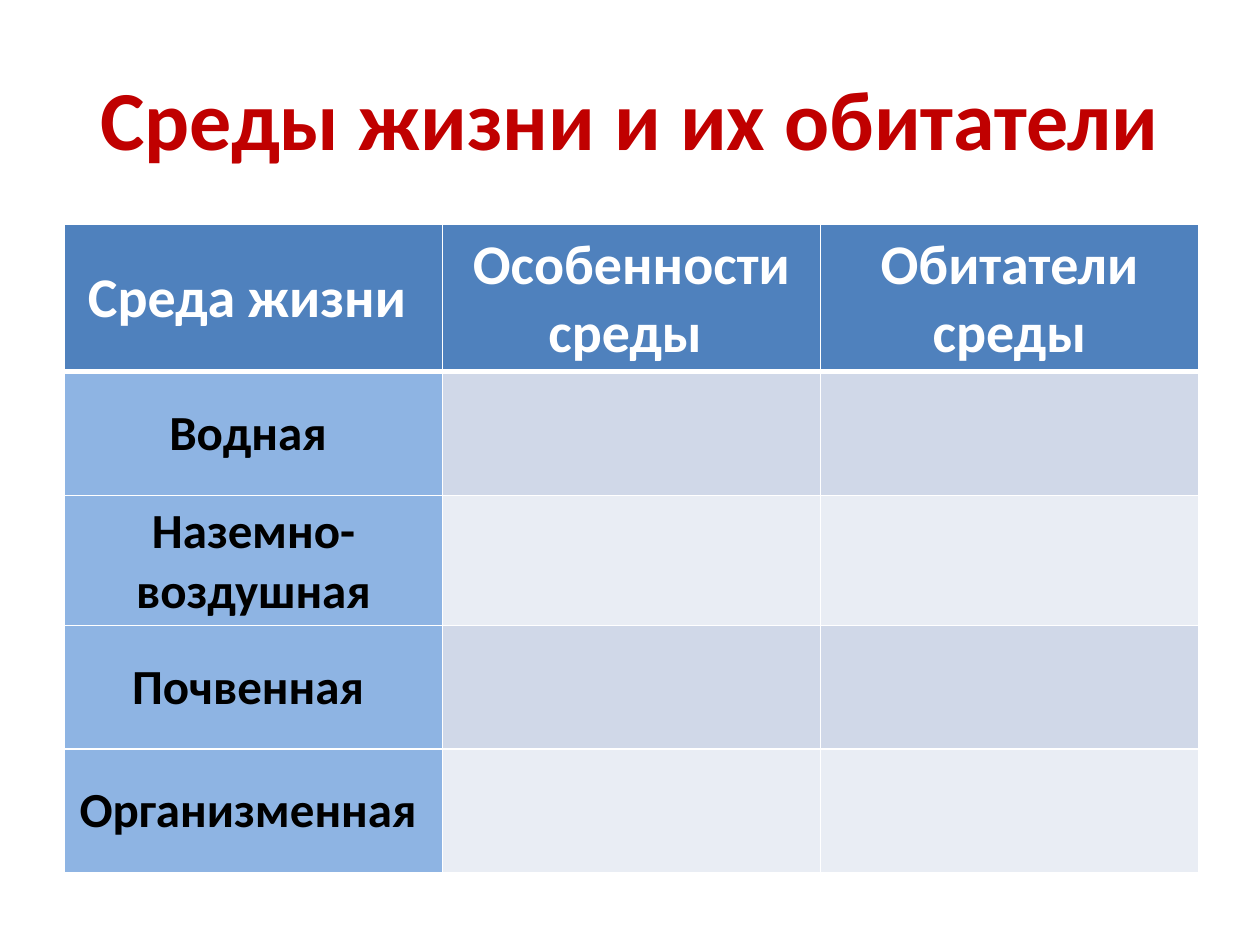
import pptx
import pptx.util
import pptx.dml.color
import pptx.enum.text
import pptx.oxml

Cm = pptx.util.Cm
Pt = pptx.util.Pt
RGBColor = pptx.dml.color.RGBColor

RED = RGBColor(0xC0, 0x00, 0x00)
WHITE = RGBColor(0xFF, 0xFF, 0xFF)
BLACK = RGBColor(0x00, 0x00, 0x00)
BLUE = RGBColor(0x4F, 0x81, 0xBD)
SKY = RGBColor(0x8E, 0xB4, 0xE3)
BANDS = RGBColor(0xD0, 0xD8, 0xE8), RGBColor(0xE9, 0xED, 0xF4)

FONT = "Calibri"
HEADS = "Среда жизни ", "Особенности среды ", "Обитатели среды"
MEDIA = "Водная ", "Наземно-воздушная", "Почвенная ", "Организменная "
LINE = (
    '<a:{tag} xmlns:a="http://schemas.openxmlformats.org/drawingml/2006/main"'
    ' w="{width}"><a:solidFill><a:srgbClr val="{color}"/></a:solidFill></a:{tag}>'
)


def write(frame, text, size, color):
    """Put one bold, centred run into a text frame."""
    para = frame.paragraphs[0]
    para.alignment = pptx.enum.text.PP_ALIGN.CENTER
    run = para.add_run()
    run.text = text
    run.font.name = FONT
    run.font.size = Pt(size)
    run.font.bold = True
    run.font.color.rgb = color


def style(cell, fill, top, base):
    """Set the borders (in points) and then the fill of a cell."""
    props = cell._tc.get_or_add_tcPr()
    for tag, width in (("lnL", 1), ("lnR", 1), ("lnT", top), ("lnB", base)):
        props.append(pptx.oxml.parse_xml(
            LINE.format(tag=tag, width=Pt(width), color=WHITE)))
    cell.fill.solid()
    cell.fill.fore_color.rgb = fill
    cell.vertical_anchor = pptx.enum.text.MSO_ANCHOR.MIDDLE


def add_title(slide, left, top, width, height):
    frame = slide.shapes.add_textbox(left, top, width, height).text_frame
    frame.word_wrap = True
    frame.vertical_anchor = pptx.enum.text.MSO_ANCHOR.MIDDLE
    write(frame, "Среды жизни и их обитатели", 48, RED)


def add_grid(slide, left, top, width, height):
    count = len(MEDIA) + 1
    table = slide.shapes.add_table(
        count, len(HEADS), left, top, width, height).table

    # Header row with a thick rule below
    for col, text in enumerate(HEADS):
        cell = table.cell(0, col)
        style(cell, BLUE, 1, 3)
        write(cell.text_frame, text, 32, WHITE)

    # One banded row per habitat, with blank cells to fill in
    for row, text in enumerate(MEDIA, 1):
        top_line = 3 if row == 1 else 1
        for col in range(len(HEADS)):
            fill = BANDS[(row - 1) % 2] if col else SKY
            style(table.cell(row, col), fill, top_line, 1)
        write(table.cell(row, 0).text_frame, text, 28, BLACK)


def main():
    deck = pptx.Presentation()
    deck.slide_width = Cm(25.4)
    deck.slide_height = Cm(19.05)
    slide = deck.slides.add_slide(deck.slide_layouts[6])
    add_title(slide, Cm(1.27), Cm(0.76), Cm(22.86), Cm(3.18))
    add_grid(slide, Cm(1.3), Cm(4.53), Cm(22.86), Cm(12.45))
    deck.save("out.pptx")


if __name__ == "__main__":
    main()
